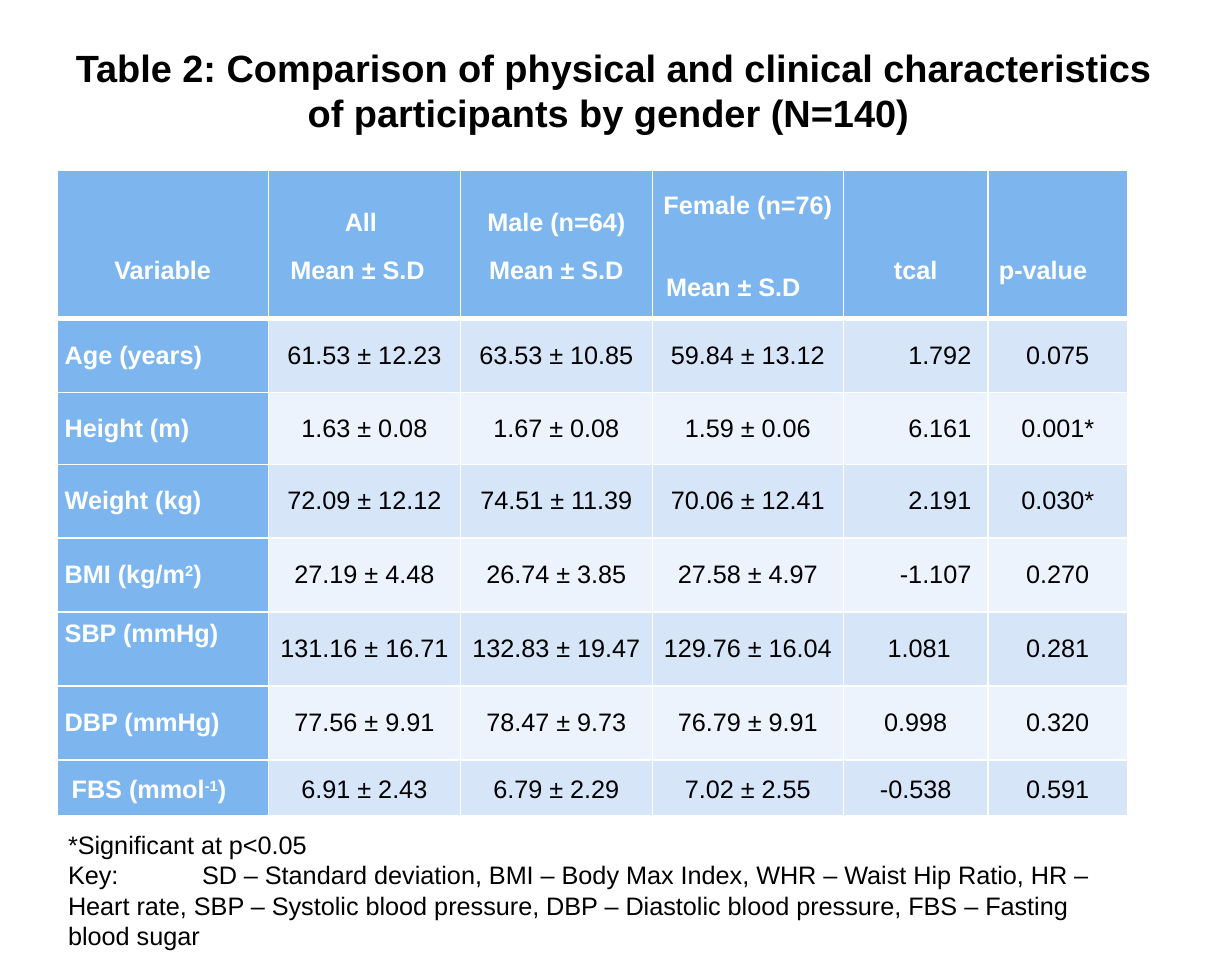
from lxml.etree import SubElement
from pptx import Presentation
from pptx.dml.color import RGBColor
from pptx.enum.text import MSO_ANCHOR, PP_ALIGN
from pptx.oxml.ns import qn
from pptx.util import Pt

WHITE, BLACK, HEADER_BLUE = "FFFFFF", "000000", "7DB6EF"
BANDS = ("D7E5F9", "ECF3FC")
COLUMN_WIDTHS = (134, 121.5, 121.5, 121, 91.5, 88.5)
ROW_HEIGHTS = (93.6, 46.8, 45.4, 46.8, 46.8, 46.8, 46.8, 35.3)
CELL_MARGIN = 5
HEADER_LINE = 31
MEAN = "Mean ± S.D"
HEADERS = (("Variable",), ("All ", MEAN), ("Male (n=64)", MEAN),
           ("Female (n=76)", MEAN), ("tcal",), ("p-value",))
# Left indents of the header lines that are not centred, by column
HEADER_INDENTS = {1: 8.9, 3: 3.8, 5: 2}
ROWS = (
    ("Age (years)", "61.53 ± 12.23", "63.53 ± 10.85", "59.84 ± 13.12", "1.792", "0.075"),
    ("Height (m)", "1.63 ± 0.08", "1.67 ± 0.08", "1.59 ± 0.06", "6.161", "0.001*"),
    ("Weight (kg)", "72.09 ± 12.12", "74.51 ± 11.39", "70.06 ± 12.41", "2.191", "0.030*"),
    (("BMI (kg/m", "2", ")"), "27.19 ± 4.48", "26.74 ± 3.85", "27.58 ± 4.97", "-1.107", "0.270"),
    ("SBP (mmHg)", "131.16 ± 16.71", "132.83 ± 19.47", "129.76 ± 16.04", " 1.081", "0.281"),
    ("DBP (mmHg)", "77.56 ± 9.91", "78.47 ± 9.73", "76.79 ± 9.91", "0.998", "0.320"),
    ((" FBS (mmol", "-1", ")"), "6.91 ± 2.43", "6.79 ± 2.29", "7.02 ± 2.55", "-0.538", "0.591"),
)
TCAL_COLUMN, RIGHT_ALIGNED_ROWS = 4, 4
SBP_ROW = 5


def color(value):
    return RGBColor.from_string(value)


def add_run(paragraph, text, size=16, fill=BLACK, bold=False, superscript=False):
    run = paragraph.add_run()
    run.text = text
    run.font.name = "Arial"
    run.font.size = Pt(size)
    run.font.bold = bold
    run.font.color.rgb = color(fill)
    if superscript:
        run.font._element.set("baseline", "30000")


def add_text_box(slide, left, top, width, height):
    frame = slide.shapes.add_textbox(Pt(left), Pt(top), Pt(width), Pt(height)).text_frame
    frame.word_wrap = True
    return frame


def add_title(slide, left, top, width, height):
    frame = add_text_box(slide, left, top, width, height)
    frame.vertical_anchor = MSO_ANCHOR.MIDDLE
    paragraph = frame.paragraphs[0]
    paragraph.alignment = PP_ALIGN.CENTER
    add_run(paragraph, "Table 2: Comparison of physical and clinical characteristics "
                       "of participants by gender (N=140) ", size=24, bold=True)


def style_cell(cell, fill, top=1, bottom=1):
    """Set the white borders, then the fill, the margins and the anchor."""
    properties = cell._tc.get_or_add_tcPr()
    for side, width in (("L", 1), ("R", 1), ("T", top), ("B", bottom)):
        line = SubElement(properties, qn(f"a:ln{side}"), w=str(Pt(width)))
        solid = SubElement(line, qn("a:solidFill"))
        SubElement(solid, qn("a:srgbClr"), val=WHITE)
    cell.fill.solid()
    cell.fill.fore_color.rgb = color(fill)
    cell.margin_left = cell.margin_right = Pt(CELL_MARGIN)
    cell.margin_top = cell.margin_bottom = 0
    cell.vertical_anchor = MSO_ANCHOR.MIDDLE


def space_paragraph(paragraph, after=10):
    paragraph.line_spacing = 1.15
    paragraph.space_after = Pt(after)


def fill_header(cell, column, lines):
    style_cell(cell, HEADER_BLUE, bottom=3)
    if len(lines) == 1:
        cell.margin_top = Pt(HEADER_LINE)
    frame = cell.text_frame
    for index, text in enumerate(lines):
        paragraph = frame.add_paragraph() if index else frame.paragraphs[0]
        paragraph.alignment = PP_ALIGN.CENTER
        space_paragraph(paragraph)
        if index == len(lines) - 1 and column in HEADER_INDENTS:
            paragraph.alignment = PP_ALIGN.LEFT
            paragraph._p.get_or_add_pPr().set("marL", str(Pt(HEADER_INDENTS[column])))
        add_run(paragraph, text, fill=WHITE, bold=True)
    if lines[0].startswith("Female"):
        frame.paragraphs[0].space_after = Pt(HEADER_LINE)


def fill_body(cell, row, column, content):
    is_label = column == 0
    style_cell(cell, HEADER_BLUE if is_label else BANDS[(row - 1) % 2],
               top=3 if row == 1 else 1)
    paragraph = cell.text_frame.paragraphs[0]
    if row == len(ROWS):
        space_paragraph(paragraph)
    if is_label:
        if row == SBP_ROW:
            cell.margin_bottom = Pt(20)
        parts = (content,) if isinstance(content, str) else content
        for index, part in enumerate(parts):
            add_run(paragraph, part, fill=WHITE, bold=True, superscript=index == 1)
        return
    paragraph.alignment = PP_ALIGN.CENTER
    if column == TCAL_COLUMN and row <= RIGHT_ALIGNED_ROWS:
        paragraph.alignment = PP_ALIGN.RIGHT
        cell.margin_right = Pt(10.5)
    add_run(paragraph, content)


def add_comparison_table(slide, left, top):
    table = slide.shapes.add_table(
        len(ROW_HEIGHTS), len(COLUMN_WIDTHS), Pt(left), Pt(top),
        Pt(sum(COLUMN_WIDTHS)), Pt(sum(ROW_HEIGHTS))).table
    for column, width in zip(table.columns, COLUMN_WIDTHS):
        column.width = Pt(width)
    for row, height in zip(table.rows, ROW_HEIGHTS):
        row.height = Pt(height)
    for column, lines in enumerate(HEADERS):
        fill_header(table.cell(0, column), column, lines)
    for row, contents in enumerate(ROWS, start=1):
        for column, content in enumerate(contents):
            fill_body(table.cell(row, column), row, column, content)


def add_key(slide, left, top, width, height):
    frame = add_text_box(slide, left, top, width, height)
    add_run(frame.paragraphs[0], "*Significant at p<0.05")
    paragraph = frame.add_paragraph()
    tabs = SubElement(paragraph._p.get_or_add_pPr(), qn("a:tabLst"))
    SubElement(tabs, qn("a:tab"), pos=str(Pt(84.8)), algn="l")
    add_run(paragraph, "Key:\tSD – Standard deviation, BMI – Body Max Index, "
                       "WHR – Waist Hip Ratio, HR – Heart rate, "
                       "SBP – Systolic blood pressure, DBP – Diastolic blood pressure, "
                       "FBS – Fasting blood sugar")


def main():
    presentation = Presentation()
    presentation.slide_width, presentation.slide_height = Pt(780), Pt(612)
    slide = presentation.slides.add_slide(presentation.slide_layouts[6])
    add_title(slide, 39, 24, 699, 66)
    add_comparison_table(slide, 36, 108)
    add_key(slide, 36, 521.3, 666, 85)
    presentation.save("out.pptx")


if __name__ == "__main__":
    main()
